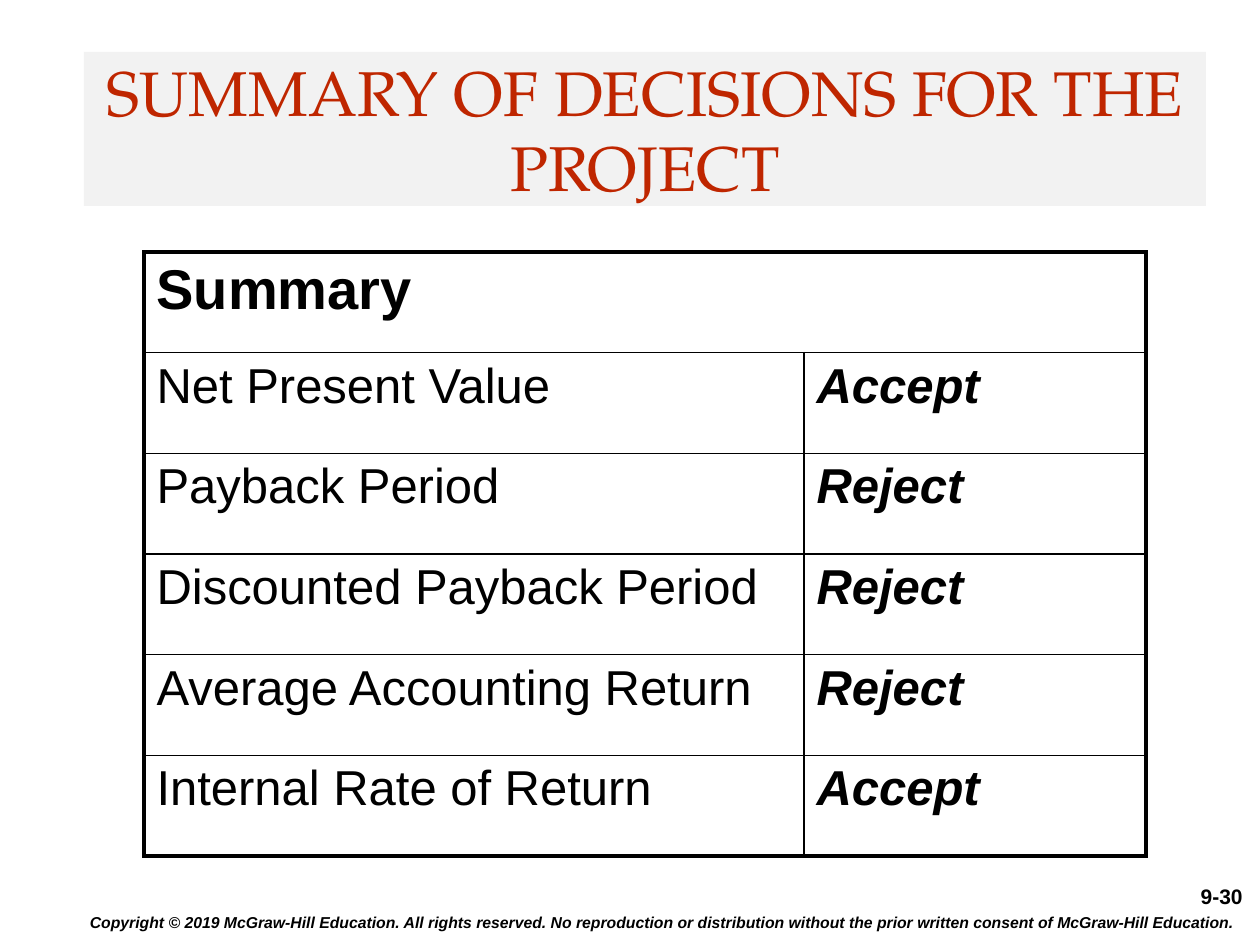
"""Build the slide that sums up the project decisions."""
from dataclasses import dataclass

from pptx import Presentation
from pptx.dml.color import RGBColor
from pptx.enum.text import MSO_ANCHOR, PP_ALIGN
from pptx.oxml.ns import qn
from pptx.util import Emu, Pt
from lxml import etree

TOP, MIDDLE = MSO_ANCHOR.TOP, MSO_ANCHOR.MIDDLE
LEFT, CENTER, RIGHT = PP_ALIGN.LEFT, PP_ALIGN.CENTER, PP_ALIGN.RIGHT
TITLE_ONLY = 5
SCALE = 914400 / 126

DECISIONS = [
    ("Net Present Value", "Accept"),
    ("Payback Period", "Reject"),
    ("Discounted Payback Period", "Reject"),
    ("Average Accounting Return", "Reject"),
    ("Internal Rate of Return", "Accept"),
]
COPYRIGHT = (
    "Copyright © 2019 McGraw-Hill Education.\u00a0All rights reserved. "
    "No reproduction or distribution without the prior written consent "
    "of McGraw-Hill Education."
).replace("\u00a0", " ")


@dataclass(frozen=True)
class Theme:
    """Colours, fonts, type sizes and line widths."""
    ink: str = "000000"
    paper: str = "FFFFFF"
    band: str = "F2F2F2"
    accent: str = "BF2600"
    body_font: str = "Arial"
    title_font: str = "TeX Gyre Pagella"
    title: int = 36
    heading: int = 32
    body: int = 28
    number: int = 12
    small: int = 9
    outer: float = 2.25
    inner: float = 1


def px(value):
    """Turn px into EMU."""
    return Emu(round(value * SCALE))


def write(frame, text, *, font, size, color, bold=False, italic=False, align=LEFT):
    """Put one formatted paragraph into a text frame."""
    para = frame.paragraphs[0]
    para.alignment = align
    span = para.add_run()
    span.text = text
    span.font.name = font
    span.font.size = Pt(size)
    span.font.bold = bold
    span.font.italic = italic
    span.font.color.rgb = RGBColor.from_string(color)


def set_borders(cell, widths, color):
    """Draw the left, right, top and bottom borders of a cell."""
    properties = cell._tc.get_or_add_tcPr()
    for index, (side, width) in enumerate(zip("LRTB", widths)):
        line = etree.Element(qn(f"a:ln{side}"), w=str(Pt(width)))
        fill = etree.SubElement(line, qn("a:solidFill"))
        etree.SubElement(fill, qn("a:srgbClr"), val=color)
        properties.insert(index, line)


class Painter:
    """Hold the style and the current slide."""

    def __init__(self, page, theme):
        """Keep the page and its theme."""
        self.page = page
        self.theme = theme

    def title(self, text, left, top, width, height):
        """Place the title on its tinted band."""
        box = self.page.shapes.title
        box.left, box.top, box.width, box.height = map(px, (left, top, width, height))
        box.fill.solid()
        box.fill.fore_color.rgb = RGBColor.from_string(self.theme.band)
        box.text_frame.word_wrap = True
        box.text_frame.vertical_anchor = MIDDLE
        write(box.text_frame, text, font=self.theme.title_font,
              size=self.theme.title, color=self.theme.accent, align=CENTER)

    def label(self, text, left, top, width, height, anchor=TOP, **style):
        """Place a bold text box."""
        box = self.page.shapes.add_textbox(*map(px, (left, top, width, height)))
        box.text_frame.word_wrap = True
        box.text_frame.vertical_anchor = anchor
        write(box.text_frame, text, font=self.theme.body_font,
              color=self.theme.ink, bold=True, **style)

    def table(self, heading, rows, left, top, columns, height):
        """Place a table with a merged heading row and a heavy frame."""
        theme = self.theme
        records = [(heading, ""), *rows]
        last_row, last_column = len(records) - 1, len(columns) - 1
        grid = self.page.shapes.add_table(
            len(records), len(columns), px(left), px(top),
            px(sum(columns)), px(height)).table
        grid.first_row = grid.horz_banding = False
        for column, width in zip(grid.columns, columns):
            column.width = px(width)
        grid.cell(0, 0).merge(grid.cell(0, last_column))
        for row, record in enumerate(records):
            for column, text in enumerate(record):
                cell = grid.cell(row, column)
                cell.fill.solid()
                cell.fill.fore_color.rgb = RGBColor.from_string(theme.paper)
                on_edge = (column == 0, column == last_column or row == 0,
                           row == 0, row == last_row)
                widths = [theme.outer if edge else theme.inner for edge in on_edge]
                set_borders(cell, widths, theme.ink)
                if text:
                    write(cell.text_frame, text, font=theme.body_font,
                          size=theme.body if row else theme.heading,
                          color=theme.ink, bold=row == 0 or column > 0,
                          italic=column > 0)


def main():
    """Build and save the deck."""
    deck = Presentation()
    deck.slide_width, deck.slide_height = px(1260), px(945)
    page = deck.slides.add_slide(deck.slide_layouts[TITLE_ONLY])
    theme = Theme()
    painter = Painter(page, theme)
    painter.title("SUMMARY OF DECISIONS FOR THE PROJECT", 84, 52, 1122, 154)
    painter.table("Summary", DECISIONS, 144, 252, (660, 342), 604)
    painter.label("9-30", 1123, 877, 132, 33, size=theme.number, align=RIGHT)
    painter.label(COPYRIGHT, 63, 900, 1197, 45, anchor=MIDDLE,
                  size=theme.small, italic=True, align=CENTER)
    deck.save("out.pptx")


if __name__ == "__main__":
    main()
